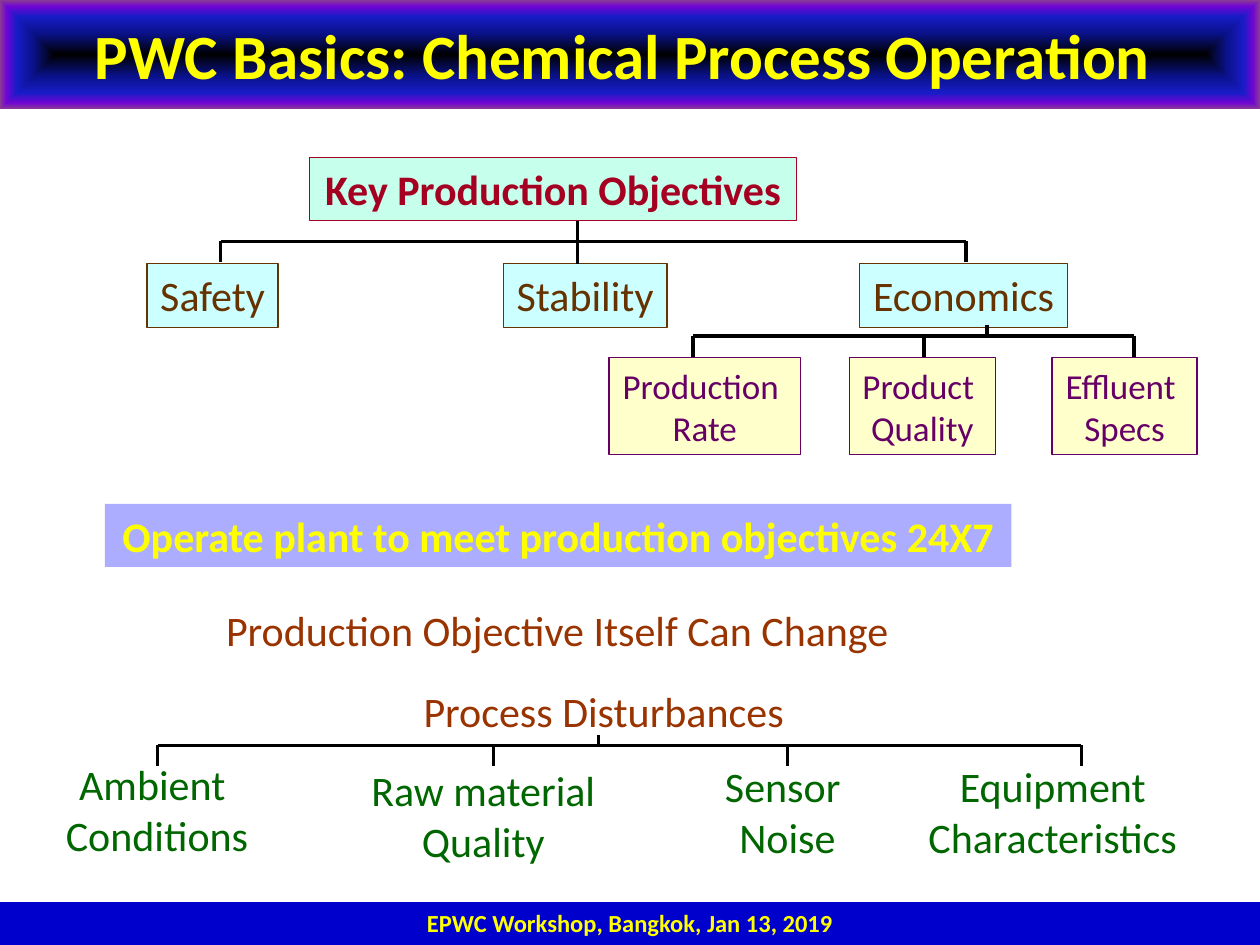
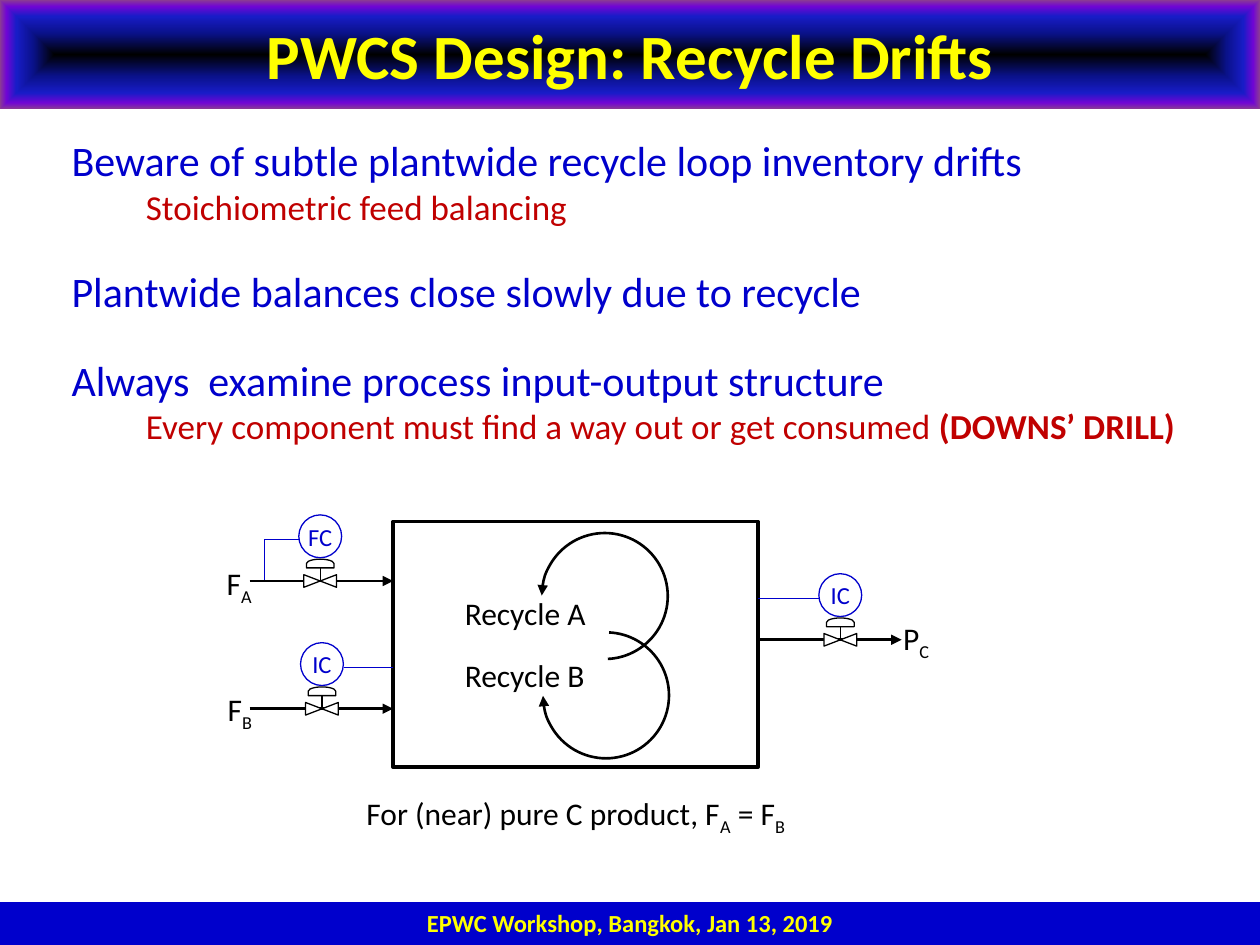
import collections

import lxml.etree
import pptx
import pptx.dml.color
import pptx.enum.shapes
import pptx.enum.text
import pptx.oxml
import pptx.oxml.ns
import pptx.util

Pt = pptx.util.Pt
RGBColor = pptx.dml.color.RGBColor
SHAPE = pptx.enum.shapes.MSO_SHAPE
ALIGN = pptx.enum.text.PP_ALIGN
ANCHOR = pptx.enum.text.MSO_ANCHOR
qn = pptx.oxml.ns.qn

Box = collections.namedtuple("Box", "left top width height")

# Shared look
FONT = "Calibri"
BLACK = RGBColor(0x00, 0x00, 0x00)
WHITE = RGBColor(0xFF, 0xFF, 0xFF)
YELLOW = RGBColor(0xFF, 0xFF, 0x00)
BLUE = RGBColor(0x00, 0x00, 0xCC)
BRIGHT_BLUE = RGBColor(0x00, 0x00, 0xFF)
MINT = RGBColor(0x66, 0xFF, 0xCC)
CRIMSON = RGBColor(0xA5, 0x00, 0x21)
RED = RGBColor(0xC0, 0x00, 0x00)
PALE_CYAN = RGBColor(0xCC, 0xFF, 0xFF)
BROWN = RGBColor(0x66, 0x33, 0x00)
CREAM = RGBColor(0xFF, 0xFF, 0xCC)
PURPLE = RGBColor(0x66, 0x00, 0x66)
RUST = RGBColor(0x99, 0x33, 0x00)
GREEN = RGBColor(0x00, 0x66, 0x00)
TITLE_STOPS = [(0, RGBColor(0x00, 0x00, 0x00)), (40, RGBColor(0x0A, 0x12, 0x8C)),
               (70, RGBColor(0x18, 0x1C, 0xC7)), (88, RGBColor(0x70, 0x05, 0xD4)),
               (100, RGBColor(0x8C, 0x3D, 0x91))]

TITLE_BOX = Box(0, 0, 720, 62.6)
FOOTER_BOX = Box(0, 515.5, 720, 24.5)
FOOTER_TEXT = "EPWC Workshop, Bangkok, Jan 13, 2019"


def offset(box, left, top, width, height):
    return Box(box.left + left, box.top + top, width, height)


# Text
def write_paragraph(paragraph, text, size, color, bold=False, align=ALIGN.CENTER,
                    accent="subscript"):
    """Write text; pieces between bars take the accent."""
    paragraph.alignment = align
    for index, piece in enumerate(text.split("|")):
        if not piece:
            continue
        run = paragraph.add_run()
        run.text = piece
        accented = index % 2 == 1
        font_values = {"name": FONT, "size": Pt(size),
                       "bold": bold or (accented and accent == "bold")}
        for name, value in font_values.items():
            setattr(run.font, name, value)
        run.font.color.rgb = color
        if accented and accent == "subscript":
            run._r.get_or_add_rPr().set("baseline", "-25000")


def fill_text(shape, lines, size, color, bold=False, align=ALIGN.CENTER,
              anchor=ANCHOR.TOP, wrap=False):
    frame = shape.text_frame
    frame.word_wrap = wrap
    frame.vertical_anchor = anchor
    for index, line in enumerate(lines):
        paragraph = frame.add_paragraph() if index else frame.paragraphs[0]
        write_paragraph(paragraph, line, size, color, bold, align)


def add_label(slide, box, lines, size, color, align=ALIGN.CENTER):
    label = slide.shapes.add_textbox(*map(Pt, box))
    fill_text(label, lines, size, color, align=align)


# Shapes and lines
def add_box(slide, kind, box, fill=None, line=None, width=0.75, opacity=None):
    shape = slide.shapes.add_shape(kind, *map(Pt, box))
    shape.shadow.inherit = False
    if fill is None:
        shape.fill.background()
    else:
        shape.fill.solid()
        shape.fill.fore_color.rgb = fill
    if opacity:
        color = shape._element.spPr.find(qn("a:solidFill"))[0]
        lxml.etree.SubElement(color, qn("a:alpha"), val=str(opacity * 1000))
    if line is None:
        shape.line.fill.background()
    else:
        shape.line.color.rgb = line
        shape.line.width = Pt(width)
    return shape


def add_arrowhead(shape, end):
    lxml.etree.SubElement(shape.line._get_or_add_ln(), qn("a:" + end), type="triangle")


def add_line(slide, box, start, end, color=BLACK, width=2, arrow=False):
    points = [Pt(base + value) for point in (start, end)
              for base, value in zip((box.left, box.top), point)]
    connector = slide.shapes.add_connector(
        pptx.enum.shapes.MSO_CONNECTOR.STRAIGHT, *points)
    connector.line.color.rgb = color
    connector.line.width = Pt(width)
    if arrow:
        add_arrowhead(connector, "tailEnd")
    lxml.etree.SubElement(connector._element.spPr, qn("a:effectLst"))


def add_branches(slide, box, stem, bar_y, drops, drop_end):
    """Draw a stem (x, top, bottom), a bar and the drops that hang from it."""
    stem_x, stem_top, stem_bottom = stem
    add_line(slide, box, (stem_x, stem_top), (stem_x, stem_bottom))
    add_line(slide, box, (drops[0], bar_y), (drops[-1], bar_y))
    for x in drops:
        add_line(slide, box, (x, bar_y), (x, drop_end))


# Title band and footer
def add_title_band(slide, box, text):
    band = add_box(slide, SHAPE.RECTANGLE, box)
    stops = "".join(f'<a:gs pos="{position * 1000}"><a:srgbClr val="{color}"/></a:gs>'
                    for position, color in TITLE_STOPS)
    gradient = pptx.oxml.parse_xml(
        f'<a:gradFill {pptx.oxml.ns.nsdecls("a")} rotWithShape="1"><a:gsLst>{stops}</a:gsLst>'
        '<a:path path="rect"><a:fillToRect l="50000" t="50000" r="50000" b="50000"/></a:path>'
        '</a:gradFill>')
    properties = band._element.spPr
    properties.replace(properties.find(qn("a:noFill")), gradient)
    fill_text(band, [text], 36, YELLOW, bold=True, anchor=ANCHOR.MIDDLE, wrap=True)


def add_footer(slide, box):
    band = add_box(slide, SHAPE.RECTANGLE, box, BLUE)
    fill_text(band, [FOOTER_TEXT], 14, YELLOW, bold=True, wrap=True)


def add_framed_slide(presentation, title):
    slide = presentation.slides.add_slide(presentation.slide_layouts[6])
    add_footer(slide, FOOTER_BOX)
    add_title_band(slide, TITLE_BOX, title)
    return slide


# Operation slide: tree of objectives
def draw_objectives(slide, box):
    root = add_box(slide, SHAPE.RECTANGLE, offset(box, 93, 0, 278, 36),
                   MINT, CRIMSON, opacity=37)
    fill_text(root, ["Key Production Objectives"], 24, CRIMSON, bold=True,
              anchor=ANCHOR.BOTTOM)

    goals = [("Safety", 75), ("Stability", 93.6), ("Economics", 118.8)]
    for index, (goal, width) in enumerate(goals):
        shape = add_box(slide, SHAPE.RECTANGLE,
                        offset(box, 203.6 * index, 60.5, width, 36.5), PALE_CYAN, BROWN)
        fill_text(shape, [goal], 24, BROWN)
    add_branches(slide, box, (246, 36, 61), 48, [42, 468], 60)

    economics = [(["Production ", "Rate"], 264, 109.4), (["Product ", "Quality"], 401.3, 83.5),
                 (["Effluent ", "Specs"], 517.2, 82.8)]
    for lines, left, width in economics:
        shape = add_box(slide, SHAPE.RECTANGLE,
                        offset(box, left, 114.5, width, 55.4), CREAM, PURPLE)
        fill_text(shape, lines, 20, PURPLE)
    add_branches(slide, box, (480, 96, 102), 102, [312, 444, 564], 114)


# Operation slide: slogan and remark
def draw_statements(slide, box):
    slogan = add_box(slide, SHAPE.RECTANGLE, offset(box, 0, 0, box.width, 36),
                     BRIGHT_BLUE, opacity=32)
    fill_text(slogan, ["Operate plant to meet production objectives 24X7"], 24, YELLOW,
              bold=True)
    add_label(slide, offset(box, 60, 54, 397, 36.5),
              ["Production Objective Itself Can Change"], 24, RUST)


# Operation slide: tree of disturbances
def draw_disturbances(slide, box):
    add_label(slide, offset(box, 186, 0, 258, 36), ["Process Disturbances"], 24, RUST)
    sources = [(["Ambient ", "Conditions"], 0, 42, 119.5),
               (["Raw material", "Quality"], 174.5, 45.5, 143.3),
               (["Sensor ", "Noise"], 376.8, 43.3, 86.4),
               (["Equipment", "Characteristics"], 492.7, 43.3, 157.7)]
    for lines, left, top, width in sources:
        add_label(slide, offset(box, left, top, width, 65.5), lines, 24, GREEN)
    add_branches(slide, box, (312, 32, 38), 38, [60, 252, 420, 588], 50)


# Recycle slide: key messages
def draw_messages(slide, box):
    frame = slide.shapes.add_textbox(*map(Pt, box)).text_frame
    frame.word_wrap = True
    messages = [("Beware of subtle plantwide recycle loop inventory drifts",
                 "Stoichiometric feed balancing"),
                ("Plantwide balances close slowly due to recycle", None),
                ("Always  examine process input-output structure",
                 "Every component must find a way out or get consumed |(DOWNS’ DRILL)|")]
    for index, (message, detail) in enumerate(messages):
        paragraph = frame.add_paragraph() if index else frame.paragraphs[0]
        write_paragraph(paragraph, message, 24, BLUE, align=ALIGN.LEFT)
        if index:
            paragraph.space_before = Pt(22)
        if detail:
            paragraph = frame.add_paragraph()
            write_paragraph(paragraph, detail, 20, RED, align=ALIGN.LEFT, accent="bold")
            paragraph._p.get_or_add_pPr().set("marL", str(Pt(42.5)))


# Recycle slide: controller circle above a valve centred in the box
def draw_control_valve(slide, box, controller):
    def centred(kind, rise, width, height, fill, line):
        return add_box(slide, kind,
                       offset(box, -width / 2, -rise - height / 2, width, height), fill, line)

    circle = centred(SHAPE.OVAL, 25.5, 24.5, 24.5, None, BLUE)
    frame = circle.text_frame
    for side in ("left", "top", "right", "bottom"):
        setattr(frame, "margin_" + side, 0)
    fill_text(circle, [controller], 14, BLUE, anchor=ANCHOR.MIDDLE)
    centred(SHAPE.FLOWCHART_COLLATE, 0, 7.2, 18.7, WHITE, BLACK).rotation = 270
    centred(SHAPE.FLOWCHART_DELAY, 10, 5, 15.8, WHITE, BLACK).rotation = 270
    add_line(slide, box, (0, 0), (0, -7.2), width=0.75)


# Recycle slide: plant with feeds, product and recycle loops
def draw_plant(slide, box):
    vessel_left, vessel_right = 104.6, 313.2
    add_box(slide, SHAPE.RECTANGLE,
            offset(box, vessel_left, 8, vessel_right - vessel_left, 140.4), None, BLACK, 2)

    signals = [[(31, 42), (31, 18.3), (50.7, 18.3)],
               [(vessel_left, 91.6), (76.6, 91.6)],
               [(vessel_right, 52), (348, 52)]]
    for points in signals:
        for start, end in zip(points, points[1:]):
            add_line(slide, box, start, end, BLUE, 0.75)

    # Stream: label, label corner, line start, flow height, valve centre, controller
    streams = [("F|A|", (2.4, 29), 22.6, 42, 63, "FC"),
               ("F|B|", (3, 101), 22.6, 115, 64, "IC"),
               ("P|C|", (389, 60), vessel_right, 75.6, 360.2, "IC")]
    for name, corner, start, flow_y, valve_x, controller in streams:
        add_label(slide, offset(box, *corner, 29.5, 28.8), [name], 18, BLACK, ALIGN.LEFT)
        add_line(slide, box, (start, flow_y), (start + 82, flow_y), width=1.5, arrow=True)
        draw_control_valve(slide, offset(box, valve_x, flow_y, 0, 0), controller)

    loops = [("Recycle A", 46.2, 189.6, 14.6), ("Recycle B", 81.5, 190.3, 71.4)]
    for index, (name, label_top, left, top) in enumerate(loops):
        add_label(slide, offset(box, 138.5, label_top, 84, 28.8), [name], 18, BLACK, ALIGN.LEFT)
        arc = add_box(slide, SHAPE.ARC, offset(box, left, top, 72, 72), None, BLACK, 1.5)
        arc.adjustments[0], arc.adjustments[1] = 108.27, 52.32
        add_arrowhead(arc, "headEnd")
        if index:
            arc._element.spPr.find(qn("a:xfrm")).set("flipV", "1")

    add_label(slide, offset(box, 82.3, 160, 257.8, 28.8),
              ["For (near) pure C product, F|A| = F|B|"], 18, BLACK, ALIGN.LEFT)


def build_operation_slide(presentation):
    slide = add_framed_slide(presentation, "PWC Basics: Chemical Process Operation ")
    draw_objectives(slide, Box(84, 90, 600, 170))
    draw_statements(slide, Box(60, 288, 518, 91))
    draw_disturbances(slide, Box(30, 388, 652, 108))


def build_recycle_slide(presentation):
    slide = add_framed_slide(presentation, "PWCS Design: Recycle Drifts")
    draw_messages(slide, Box(33.8, 73.4, 650, 186.5))
    draw_plant(slide, Box(120, 290, 420, 190))


def main():
    presentation = pptx.Presentation()
    presentation.slide_width, presentation.slide_height = Pt(720), Pt(540)
    build_operation_slide(presentation)
    build_recycle_slide(presentation)
    presentation.save("out.pptx")


if __name__ == "__main__":
    main()
